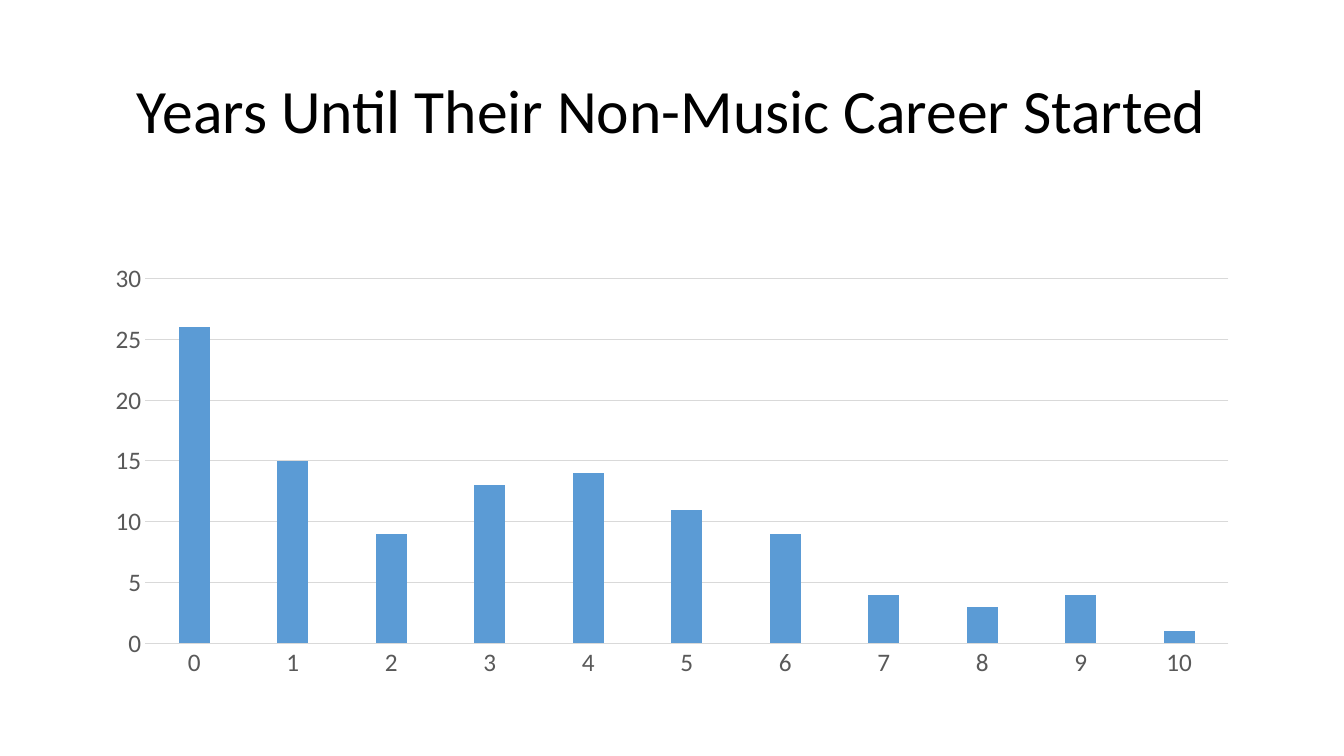
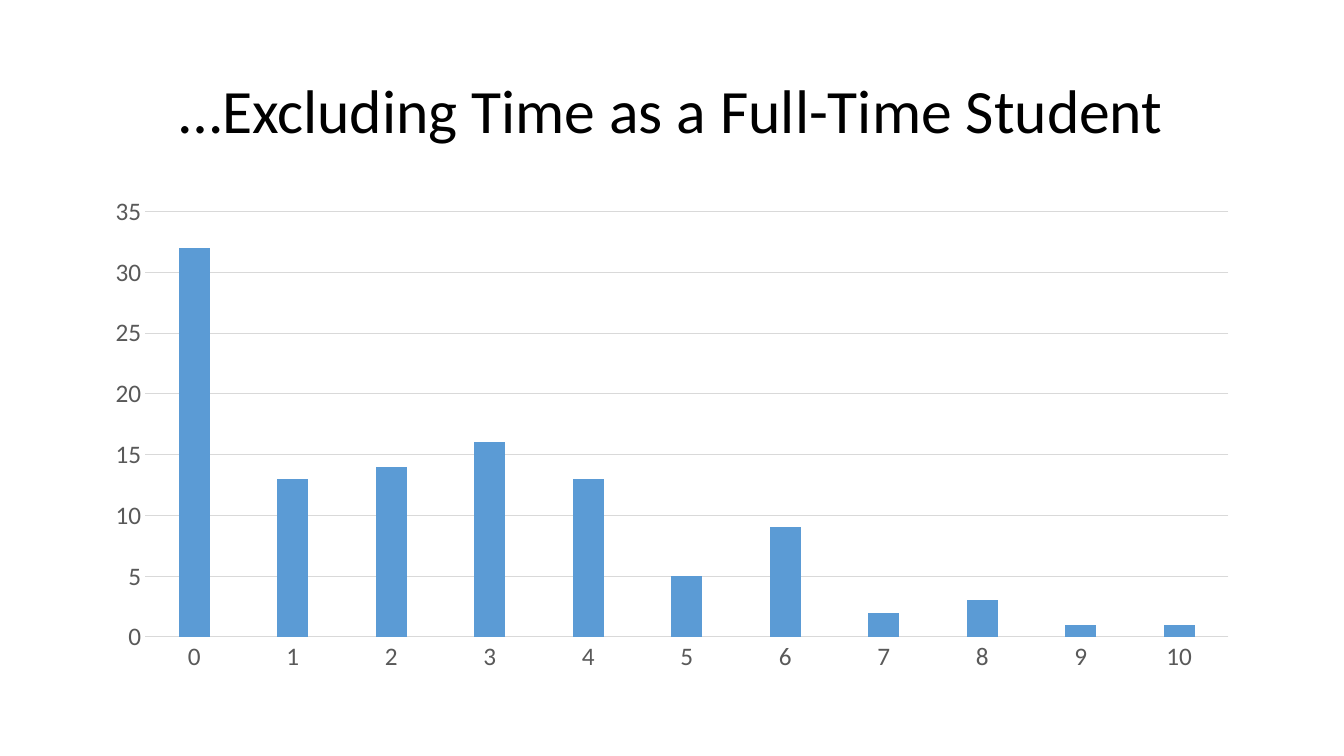
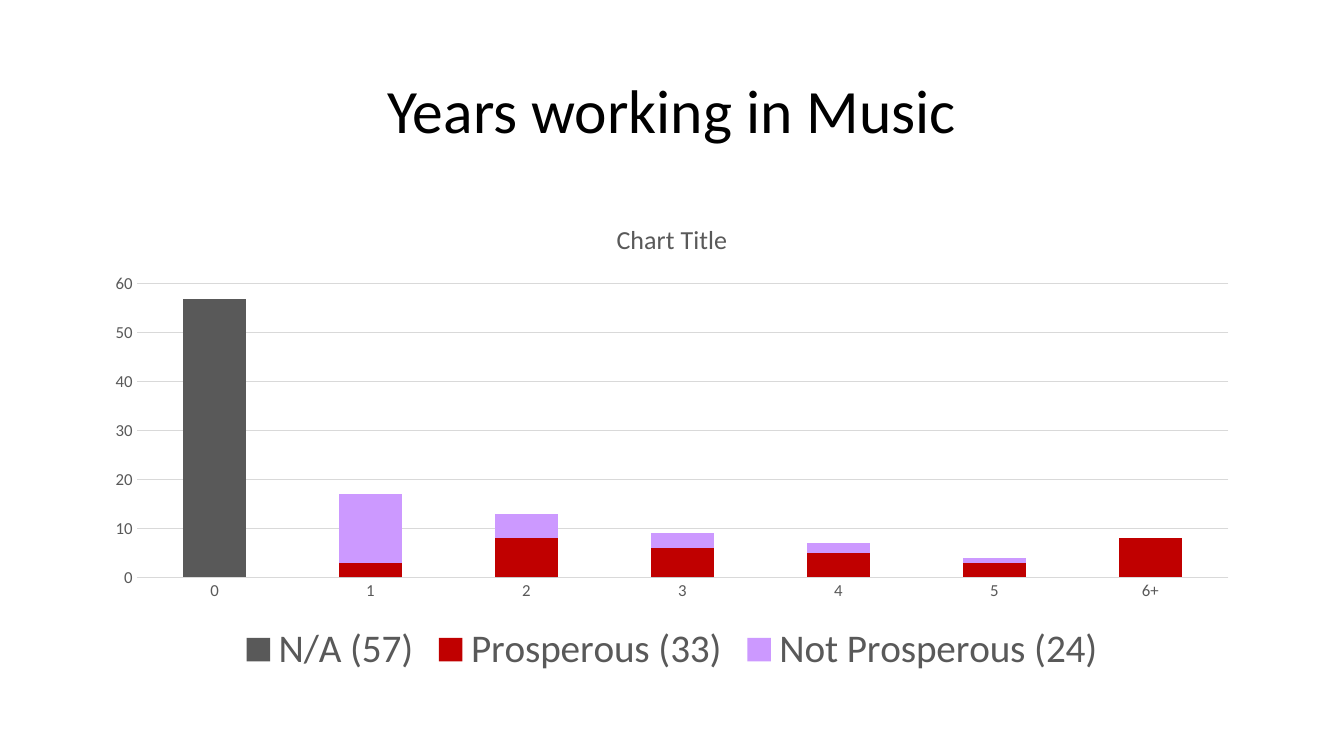
from pptx import Presentation
from pptx.chart.data import CategoryChartData
from pptx.dml.color import RGBColor
from pptx.enum.chart import XL_CHART_TYPE, XL_LEGEND_POSITION, XL_TICK_MARK
from pptx.enum.text import MSO_ANCHOR, PP_ALIGN
from pptx.util import Pt

# Shared style
FONT = "Calibri"
BLACK, GREY, RULE = "000000", "595959", "D9D9D9"
BLUE, RED, LILAC = "5B9BD5", "C00000", "CC99FF"
LEFT, WIDTH = 66, 828
TITLE_BOX = (LEFT, 28.75, WIDTH, 104.4)
YEARS = [str(year) for year in range(11)]


def color(hex_text):
    return RGBColor.from_string(hex_text)


def style_font(font, size, ink=GREY):
    font.name, font.size, font.bold = FONT, Pt(size), False
    font.color.rgb = color(ink)


def add_text(page, text, box, size=18, ink=BLACK, align=PP_ALIGN.LEFT,
             anchor=MSO_ANCHOR.TOP, spacing=1.0):
    frame = page.shapes.add_textbox(*map(Pt, box)).text_frame
    frame.word_wrap = True
    frame.vertical_anchor = anchor
    para = frame.paragraphs[0]
    para.alignment, para.line_spacing = align, spacing
    span = para.add_run()
    span.text = text
    style_font(span.font, size, ink)


def style_axes(chart, size):
    for axis in (chart.category_axis, chart.value_axis):
        axis.major_tick_mark = axis.minor_tick_mark = XL_TICK_MARK.NONE
        style_font(axis.tick_labels.font, size)
    chart.value_axis.format.line.fill.background()
    chart.value_axis.has_major_gridlines = True
    for line in (chart.category_axis.format.line,
                 chart.value_axis.major_gridlines.format.line):
        line.color.rgb = color(RULE)
        line.width = Pt(0.75)


def add_columns(page, box, categories, series, stacked=False, axis_size=18,
                gap=219, overlap=-27):
    """Series are (name, values, colour) triples."""
    data = CategoryChartData()
    data.categories = categories
    for name, values, _ in series:
        data.add_series(name, values)
    kind = XL_CHART_TYPE.COLUMN_STACKED if stacked else XL_CHART_TYPE.COLUMN_CLUSTERED
    chart = page.shapes.add_chart(kind, *map(Pt, box), data).chart
    style_font(chart.font, 10, BLACK)
    chart.has_title = chart.has_legend = False
    style_axes(chart, axis_size)

    plot = chart.plots[0]
    plot.vary_by_categories = False
    plot.gap_width, plot.overlap = gap, overlap
    for bars, (_, _, fill) in zip(plot.series, series):
        bars.invert_if_negative = False
        bars.format.fill.solid()
        bars.format.fill.fore_color.rgb = color(fill)
    return chart


def add_page(deck, title):
    page = deck.slides.add_slide(deck.slide_layouts[6])
    add_text(page, title, TITLE_BOX, size=44, align=PP_ALIGN.CENTER,
             anchor=MSO_ANCHOR.MIDDLE, spacing=0.9)
    return page


def add_years_page(deck, title, top, height, values):
    page = add_page(deck, title)
    add_columns(page, (LEFT, top, WIDTH, height), YEARS,
                [("Series 1", values, BLUE)])


def add_music_page(deck, title, top, height):
    page = add_page(deck, title)
    series = [
        ("N/A (57)", (57, 0, 0, 0, None, None, None), GREY),
        ("Prosperous (33)", (0, 3, 8, 6, 5, 3, 8), RED),
        ("Not Prosperous (24)", (0, 14, 5, 3, 2, 1, None), LILAC),
    ]
    chart = add_columns(page, (LEFT, top, WIDTH, height), YEARS[:6] + ["6+"],
                        series, stacked=True, axis_size=12, gap=150, overlap=100)
    # Heading and legend
    chart.has_title = True
    chart.chart_title.include_in_layout = False
    para = chart.chart_title.text_frame.paragraphs[0]
    span = para.add_run()
    span.text = "Chart Title"
    style_font(span.font, 18.6)
    chart.has_legend = True
    chart.legend.position = XL_LEGEND_POSITION.BOTTOM
    chart.legend.include_in_layout = False
    style_font(chart.legend.font, 28)


def main():
    deck = Presentation()
    deck.slide_width, deck.slide_height = Pt(960), Pt(540)
    add_years_page(deck, "Years Until Their Non-Music Career Started", 182, 308.25,
                   (26, 15, 9, 13, 14, 11, 9, 4, 3, 4, 1))
    add_years_page(deck, "…Excluding Time as a Full-Time Student", 133.15, 353.5,
                   (32, 13, 14, 16, 13, 5, 9, 2, 3, 1, 1))
    add_music_page(deck, "Years working in Music", 143.75, 342.75)
    deck.save("out.pptx")


if __name__ == "__main__":
    main()
